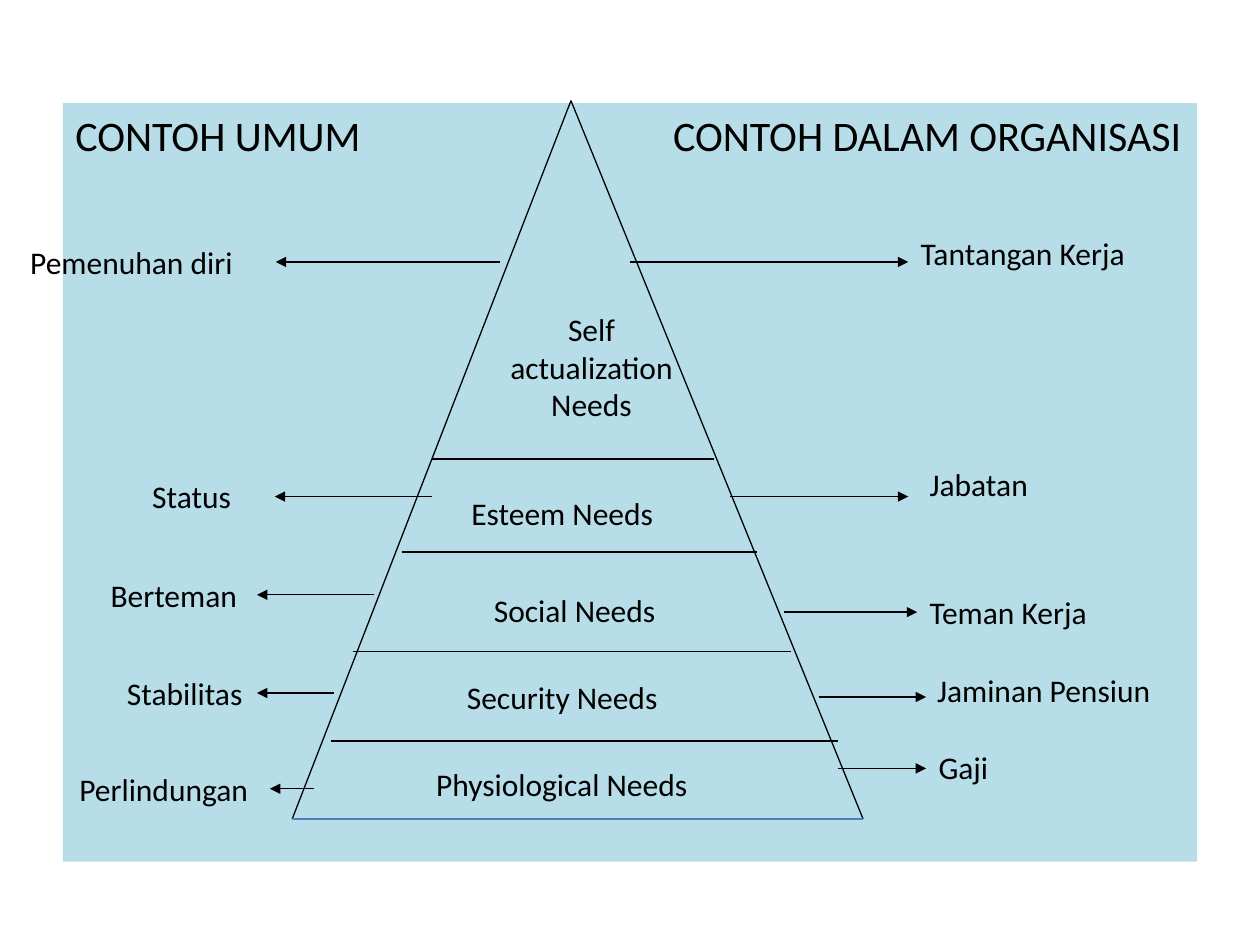
from lxml import etree
from pptx import Presentation
from pptx import util as u
from pptx.dml.color import RGBColor
from pptx.enum import shapes, text
from pptx.oxml.ns import qn

COLORS = {"panel": "B7DEE8", "ink": "000000", "base": "4B7EBC"}
FONT = "Calibri"

APEX = (11.51, 2.03)
BASE_LEFT, BASE_RIGHT, BASE_Y = 5.89, 17.4, 16.51
DIVIDERS = [(6.68, 16.89, 14.94), (7.11, 15.95, 13.13),
            (8.1, 15.27, 11.13), (8.71, 14.4, 9.25)]
NEEDS = [
    (["Physiological Needs"], 6.73, 15.29, 9.19),
    (["Security Needs"], 7.54, 13.54, 7.59),
    (["Social Needs"], 8.79, 11.79, 5.59),
    (["Esteem Needs"], 9.19, 9.83, 4.29),
    (["Self", "actualization Needs"], 9.88, 6.12, 4.09),
]
EXAMPLES = [
    ("Pemenuhan diri", 0.36, 4.78, 5.21, (10.08, 5.56, 5.28)),
    ("Tantangan Kerja", 18.31, 4.6, 4.98, (12.7, 18.31, 5.28)),
    ("Status", 2.82, 9.5, 2.72, (8.71, 5.54, 10.01)),
    ("Jabatan", 18.49, 9.25, 4.98, (14.71, 18.31, 10.01)),
    ("Berteman", 1.98, 11.48, 5.21, (7.54, 5.18, 11.99)),
    ("Teman Kerja", 18.49, 11.84, 4.98, (15.8, 18.49, 12.34)),
    ("Stabilitas", 2.31, 13.46, 2.95, (6.73, 5.18, 13.97)),
    ("Jaminan Pensiun", 18.64, 13.41, 5.89, (16.51, 18.67, 14.05)),
    ("Perlindungan", 1.35, 15.39, 4.09, (6.32, 5.44, 15.9)),
    ("Gaji", 18.67, 14.96, 4.72, (16.89, 18.67, 15.49)),
]


def color(name):
    """Return the named palette colour."""
    return RGBColor.from_string(COLORS[name])


def style(paragraph, size, align):
    """Set the font and alignment of a paragraph."""
    paragraph.alignment = align
    paragraph.font.name = FONT
    paragraph.font.size = u.Pt(size)
    paragraph.font.color.rgb = color("ink")


def add_panel(slide):
    """Draw the tinted panel with its two column headings."""
    panel = slide.shapes.add_shape(shapes.MSO_SHAPE.RECTANGLE, u.Cm(1.27),
                                   u.Cm(2.08), u.Cm(22.86), u.Cm(15.29))
    panel.shadow.inherit = False
    panel.fill.solid()
    panel.fill.fore_color.rgb = color("panel")
    panel.line.fill.background()
    frame = panel.text_frame
    frame.vertical_anchor = text.MSO_ANCHOR.TOP
    heading = frame.paragraphs[0]
    heading.text = "CONTOH UMUM\tCONTOH DALAM ORGANISASI"
    tabs = etree.SubElement(heading._p.get_or_add_pPr(), qn("a:tabLst"))
    etree.SubElement(tabs, qn("a:tab"), pos=str(u.Cm(12.05)), algn="l")
    style(heading, 24, text.PP_ALIGN.LEFT)


def add_line(slide, start, end, ink="ink", arrow=False):
    """Draw a thin straight line, with an arrowhead at its end if asked."""
    line = slide.shapes.add_connector(
        shapes.MSO_CONNECTOR.STRAIGHT, *map(u.Cm, start + end))
    line.line.color.rgb = color(ink)
    line.line.width = u.Pt(0.75)
    if arrow:
        etree.SubElement(line.line._get_or_add_ln(), qn("a:tailEnd"),
                         type="triangle")
    etree.SubElement(line._element.spPr, qn("a:effectLst"))


def add_label(slide, lines, left, top, width, align):
    """Write an 18 pt label, one paragraph for each line."""
    label = slide.shapes.add_textbox(u.Cm(left), u.Cm(top), u.Cm(width),
                                     u.Cm(1.02 if len(lines) == 1 else 2.57))
    frame = label.text_frame
    frame.word_wrap = True
    frame.auto_size = text.MSO_AUTO_SIZE.SHAPE_TO_FIT_TEXT
    frame.text = "\n".join(lines)
    for paragraph in frame.paragraphs:
        style(paragraph, 18, align)


def add_pyramid(slide):
    """Draw the pyramid outline, its dividers and the names of the needs."""
    for corner in (BASE_LEFT, BASE_RIGHT):
        add_line(slide, APEX, (corner, BASE_Y))
    add_line(slide, (BASE_LEFT, BASE_Y), (BASE_RIGHT, BASE_Y), "base")
    for left, right, y in DIVIDERS:
        add_line(slide, (left, y), (right, y))
    for lines, left, top, width in NEEDS:
        add_label(slide, lines, left, top, width, text.PP_ALIGN.CENTER)


def main():
    """Build the slide on the hierarchy of needs and save it."""
    deck = Presentation()
    deck.slide_width, deck.slide_height = u.Cm(25.4), u.Cm(19.05)
    slide = deck.slides.add_slide(deck.slide_layouts[6])
    add_panel(slide)
    add_pyramid(slide)
    for example, left, top, width, (start, end, y) in EXAMPLES:
        add_label(slide, [example], left, top, width, text.PP_ALIGN.LEFT)
        add_line(slide, (start, y), (end, y), arrow=True)
    deck.save("out.pptx")


if __name__ == "__main__":
    main()
